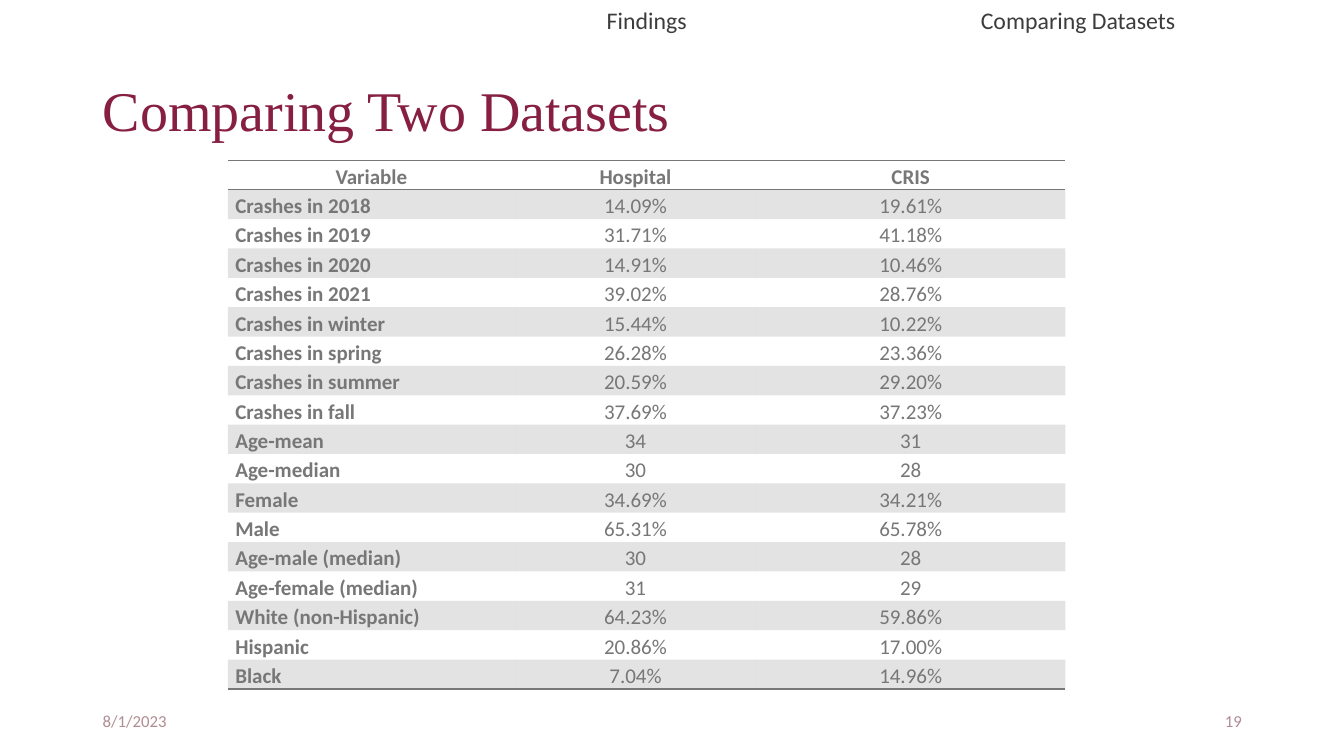
from lxml.etree import SubElement
from pptx import Presentation
from pptx.dml.color import RGBColor
from pptx.enum.text import MSO_ANCHOR, PP_ALIGN
from pptx.oxml.ns import qn
from pptx.util import Cm, Pt

MAROON, ROSE, DARK, GREY = "861F41", "AF8D93", "3C3C3C", "777777"
PLAIN_TABLE_STYLE = "{2D5ABB26-0587-4C30-8999-92F81FD0307C}"
COLUMN_WIDTHS = [7.24, 6.07, 7.8]
ROW_HEIGHT = 0.74
COMPARISON = [
    ("Variable", "Hospital", "CRIS"),
    ("Crashes in 2018", "14.09%", "19.61%"),
    ("Crashes in 2019", "31.71%", "41.18%"),
    ("Crashes in 2020", "14.91%", "10.46%"),
    ("Crashes in 2021", "39.02%", "28.76%"),
    ("Crashes in winter", "15.44%", "10.22%"),
    ("Crashes in spring", "26.28%", "23.36%"),
    ("Crashes in summer", "20.59%", "29.20%"),
    ("Crashes in fall", "37.69%", "37.23%"),
    ("Age-mean", "34", "31"),
    ("Age-median", "30", "28"),
    ("Female", "34.69%", "34.21%"),
    ("Male", "65.31%", "65.78%"),
    ("Age-male (median)", "30", "28"),
    ("Age-female (median)", "31", "29"),
    ("White (non-Hispanic)", "64.23%", "59.86%"),
    ("Hispanic", "20.86%", "17.00%"),
    ("Black", "7.04%", "14.96%"),
]


def rgb(color):
    return RGBColor.from_string(color)


def write(frame, text, size, color, font="Calibri", bold=False,
          align=PP_ALIGN.LEFT, spacing=1.0):
    paragraph = frame.paragraphs[0]
    paragraph.alignment = align
    paragraph.line_spacing = spacing
    run = paragraph.add_run()
    run.text = text
    run.font.name = font
    run.font.size = Pt(size)
    run.font.bold = bold
    run.font.color.rgb = rgb(color)


def add_label(slide, left, top, width, height, text, anchor=MSO_ANCHOR.TOP, **text_format):
    frame = slide.shapes.add_textbox(Cm(left), Cm(top), Cm(width), Cm(height)).text_frame
    frame.word_wrap = True
    frame.vertical_anchor = anchor
    write(frame, text, **text_format)


def add_title(slide, text):
    title = slide.shapes.title
    title.left, title.top, title.width, title.height = Cm(2.34), Cm(1.02), Cm(29.21), Cm(3.68)
    title.text_frame.vertical_anchor = MSO_ANCHOR.MIDDLE
    write(title.text_frame, text, size=40, color=MAROON, font="Times New Roman", spacing=0.9)


def add_rule(cell, side):
    """Draw a cell border; side is lnT or lnB, and lnT has to come first."""
    line = SubElement(cell._tc.get_or_add_tcPr(), qn(f"a:{side}"), w=str(Pt(1)))
    fill = SubElement(line, qn("a:solidFill"))
    SubElement(fill, qn("a:srgbClr"), val=GREY)


def shade(cell):
    cell.fill.solid()
    cell.fill.fore_color.rgb = rgb(GREY)
    tint = cell._tc.tcPr.find(qn("a:solidFill")).find(qn("a:srgbClr"))
    SubElement(tint, qn("a:alpha"), val="20000")


def format_cell(cell, text, row, column):
    is_header = row == 0
    cell.margin_left = cell.margin_right = Cm(0.19)
    cell.margin_top = cell.margin_bottom = 0
    if is_header:
        add_rule(cell, "lnT")
    if is_header or row == len(COMPARISON) - 1:
        add_rule(cell, "lnB")
    if row % 2:
        shade(cell)
    else:
        cell.fill.background()
    is_variable = column == 0 and not is_header
    write(cell.text_frame, text, size=15, color=GREY, spacing=1.15,
          bold=is_header or column == 0,
          align=PP_ALIGN.JUSTIFY if is_variable else PP_ALIGN.CENTER)


def add_comparison_table(slide):
    frame = slide.shapes.add_table(
        len(COMPARISON), len(COLUMN_WIDTHS), Cm(5.74), Cm(4.04),
        Cm(sum(COLUMN_WIDTHS)), Cm(ROW_HEIGHT * len(COMPARISON)))
    next(frame.element.iter(qn("a:tableStyleId"))).text = PLAIN_TABLE_STYLE
    table = frame.table
    table.horz_banding = False
    for column, width in zip(table.columns, COLUMN_WIDTHS):
        column.width = Cm(width)
    for row, values in enumerate(COMPARISON):
        table.rows[row].height = Cm(ROW_HEIGHT)
        for column, text in enumerate(values):
            format_cell(table.cell(row, column), text, row, column)


def main():
    deck = Presentation()
    deck.slide_width, deck.slide_height = Cm(33.87), Cm(19.05)
    slide = deck.slides.add_slide(deck.slide_layouts[5])

    add_title(slide, "Comparing Two Datasets")
    for left, text, align in [(2.34, "8/1/2023", PP_ALIGN.LEFT), (23.93, "19", PP_ALIGN.RIGHT)]:
        add_label(slide, left, 17.65, 7.62, 1.02, text, anchor=MSO_ANCHOR.MIDDLE,
                  size=12, color=ROSE, align=align)
    add_comparison_table(slide)
    for left, section in [(11.51, "Findings"), (22.38, "Comparing Datasets")]:
        add_label(slide, left, 0.03, 9.58, 0.99, section,
                  size=17, color=DARK, align=PP_ALIGN.CENTER)

    deck.save("out.pptx")


if __name__ == "__main__":
    main()
